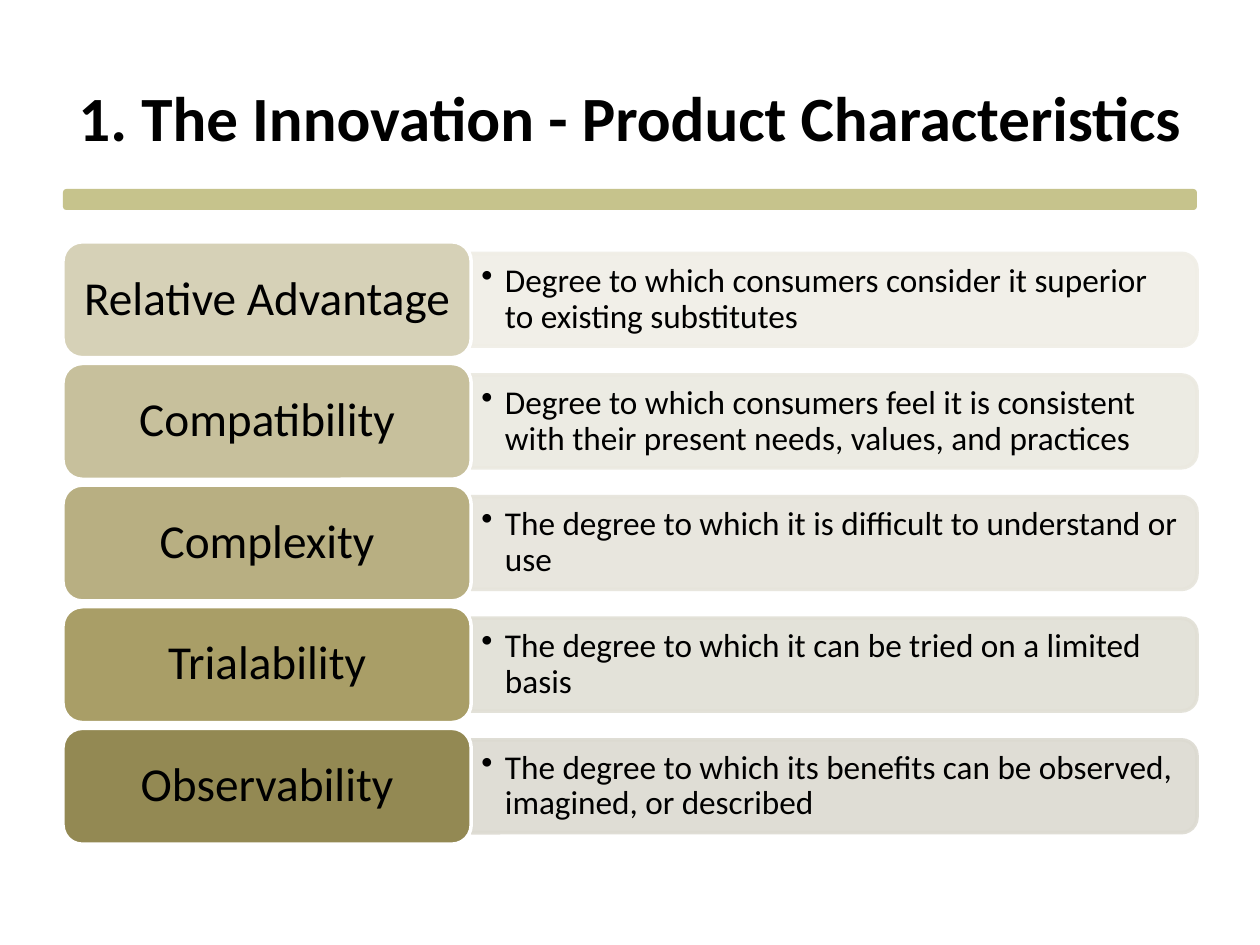
import pptx
import pptx.dml.color
import pptx.enum.shapes
import pptx.enum.text
import pptx.oxml
import pptx.oxml.ns
import pptx.util
from lxml import etree

Pt = pptx.util.Pt
RGBColor = pptx.dml.color.RGBColor
MSO_SHAPE = pptx.enum.shapes.MSO_SHAPE
PP_ALIGN = pptx.enum.text.PP_ALIGN
MSO_ANCHOR = pptx.enum.text.MSO_ANCHOR
MSO_AUTO_SIZE = pptx.enum.text.MSO_AUTO_SIZE
qn = pptx.oxml.ns.qn

BLACK = RGBColor(0x00, 0x00, 0x00)
WHITE = RGBColor(0xFF, 0xFF, 0xFF)
RULE_GREEN = RGBColor(0xC6, 0xC3, 0x8C)

CHARACTERISTICS = [
    ("Relative Advantage",
     "Degree to which consumers consider it superior to existing substitutes",
     RGBColor(0xD6, 0xD1, 0xB7), RGBColor(0xF0, 0xEE, 0xE6)),
    ("Compatibility",
     "Degree to which consumers feel it is consistent with their present needs, values, and practices",
     RGBColor(0xC7, 0xC0, 0x9C), RGBColor(0xEB, 0xE9, 0xE0)),
    ("Complexity",
     "The degree to which it is difficult to understand or use",
     RGBColor(0xB8, 0xAF, 0x82), RGBColor(0xE6, 0xE4, 0xDB)),
    ("Trialability",
     "The degree to which it can be tried on a limited basis",
     RGBColor(0xA9, 0x9E, 0x67), RGBColor(0xE1, 0xDF, 0xD5)),
    ("Observability",
     "The degree to which its benefits can be observed, imagined, or described",
     RGBColor(0x93, 0x89, 0x53), RGBColor(0xDC, 0xDA, 0xD1)),
]

LABEL_WIDTH = 233.3
ROW_HEIGHT = 66.2
ROW_PITCH = 69.5
PANEL_HEIGHT = 53.1


def set_attributes(target, values):
    for name, value in values.items():
        setattr(target, name, value)


def write_text(shape, text, size, horizontal_inset, vertical_inset,
               bold=False, **paragraph_format):
    frame = shape.text_frame
    set_attributes(frame, {
        "text": text, "word_wrap": True, "auto_size": MSO_AUTO_SIZE.NONE,
        "vertical_anchor": MSO_ANCHOR.MIDDLE,
        "margin_left": Pt(horizontal_inset), "margin_right": Pt(horizontal_inset),
        "margin_top": Pt(vertical_inset), "margin_bottom": Pt(vertical_inset)})
    paragraph = frame.paragraphs[0]
    set_attributes(paragraph, paragraph_format)
    font = paragraph.runs[0].font
    set_attributes(font, {"name": "Calibri", "size": Pt(size), "bold": bold})
    font.color.rgb = BLACK
    return paragraph


def add_filled_shape(slide, kind, left, top, width, height, fill, line=None):
    shape = slide.shapes.add_shape(kind, Pt(left), Pt(top), Pt(width), Pt(height))
    shape.shadow.inherit = False
    shape.fill.solid()
    shape.fill.fore_color.rgb = fill
    if line is None:
        shape.line.fill.background()
    else:
        shape.line.color.rgb = line
        shape.line.width = Pt(2)
    return shape


def add_bullet(paragraph, indent):
    properties = paragraph._p.get_or_add_pPr()
    properties.set("marL", str(Pt(indent)))
    properties.set("indent", str(-Pt(indent)))
    etree.SubElement(properties, qn("a:buChar")).set("char", "•")


def set_opacity(shape, percent):
    """Make fill and line equally transparent."""
    for color in shape._element.spPr.iter(qn("a:srgbClr")):
        etree.SubElement(color, qn("a:alpha")).set("val", str(percent * 1000))


def add_heading(slide, left, top, width, height):
    title = slide.shapes.title
    set_attributes(title, {"left": Pt(left), "top": Pt(top),
                           "width": Pt(width), "height": Pt(height)})
    write_text(title, "1. The Innovation - Product Characteristics", 36, 7.2, 3.6,
               bold=True, alignment=PP_ALIGN.CENTER)


def add_description(slide, left, top, width, height, text, color):
    """Panel rounded on its right side only, with a bulleted text over it."""
    panel = add_filled_shape(
        slide, MSO_SHAPE.ROUND_2_SAME_RECTANGLE,
        left + (width - height) / 2, top + (height - width) / 2, height, width,
        color, color)
    panel.rotation = 90
    set_opacity(panel, 90)
    box = slide.shapes.add_textbox(Pt(left), Pt(top + 2.6), Pt(width - 2.6),
                                   Pt(height - 5.2))
    paragraph = write_text(box, text, 19, 5.8, 2.9,
                           alignment=PP_ALIGN.LEFT, line_spacing=0.9)
    add_bullet(paragraph, 13.5)


def add_characteristic(slide, left, top, width, name, description,
                       label_color, panel_color):
    add_description(slide, left + LABEL_WIDTH, top + (ROW_HEIGHT - PANEL_HEIGHT) / 2,
                    width - LABEL_WIDTH, PANEL_HEIGHT, description, panel_color)
    label = add_filled_shape(slide, MSO_SHAPE.ROUNDED_RECTANGLE, left, top,
                             LABEL_WIDTH, ROW_HEIGHT, label_color, WHITE)
    write_text(label, name, 27, 8, 4.3, alignment=PP_ALIGN.CENTER, line_spacing=0.9)


def main():
    presentation = pptx.Presentation()
    set_attributes(presentation, {"slide_width": Pt(720), "slide_height": Pt(540)})
    slide = presentation.slides.add_slide(presentation.slide_layouts[5])
    add_filled_shape(slide, MSO_SHAPE.ROUNDED_RECTANGLE, 36, 108, 648, 12, RULE_GREEN)
    add_heading(slide, 36, 21.6, 648, 90)
    for row, characteristic in enumerate(CHARACTERISTICS):
        add_characteristic(slide, 36, 138.2 + row * ROW_PITCH, 648, *characteristic)
    presentation.save("out.pptx")


if __name__ == "__main__":
    main()
